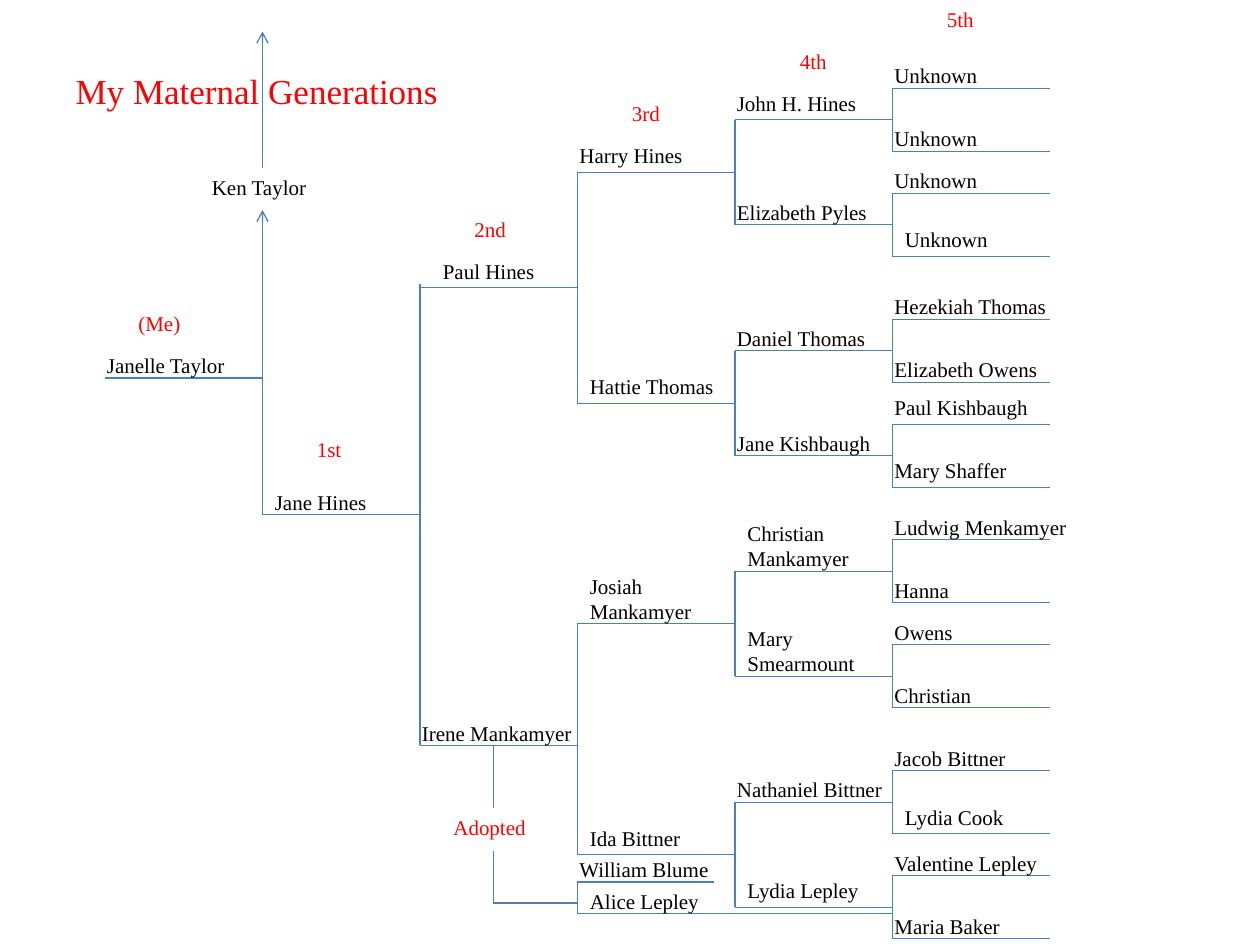
"""Build a family tree slide of maternal generations."""
from dataclasses import dataclass

from lxml import etree
from pptx import Presentation, util as u
from pptx.dml.color import RGBColor
from pptx.enum import shapes, text
from pptx.oxml.ns import qn


@dataclass(frozen=True)
class Theme:
    font: str = "Times New Roman"
    ink: str = "000000"
    accent: str = "FF0000"
    branch: str = "4B7EBC"
    body: int = 12
    heading: int = 20
    stroke: float = 0.75


COLUMNS, ROWS = 120, 90
STEP = 15
FIRST_COLUMN = 10
LINE_HEIGHT, HEADING_HEIGHT, EXTRA_LINE = 3.6, 5.3, 2.4

# Each person: line row, name, text width, indent, rise above the line, wrap.
GENERATIONS = [
    [(36, "Janelle Taylor", 13.8, 0, 3, False)],
    [(49, "Jane Hines", 11.3, 1, 3, False)],
    [
        (27.4, "Paul Hines", 13, 2, 3.4, True),
        (71, "Irene Mankamyer", 16.9, 0, 3, False),
    ],
    [
        (16.4, "Harry Hines", 12.4, 0, 3.4, False),
        (38.4, "Hattie Thomas", 14.4, 1, 3.4, False),
        (59.4, "Josiah\nMankamyer", 12.2, 1, 5.4, False),
        (81.4, "Ida Bittner", 11.2, 1, 3.4, False),
    ],
    [
        (11.4, "John H. Hines", 13.9, 0, 3.4, False),
        (21.4, "Elizabeth Pyles", 15, 0, 3, False),
        (33.4, "Daniel Thomas", 14.9, 0, 3, False),
        (43.4, "Jane Kishbaugh", 15.2, 0, 3, False),
        (54.4, "Christian\nMankamyer", 12.2, 1, 5.4, False),
        (64.4, "Mary\nSmearmount", 13.1, 1, 5.4, False),
        (76.4, "Nathaniel Bittner", 16.4, 0, 3, False),
        (86.4, "Lydia Lepley", 13.2, 1, 3.4, False),
    ],
    [
        (8.4, "Unknown", 10.3, 0, 3, False),
        (14.4, "Unknown", 20, 0, 3, True),
        (18.4, "Unknown", 10.3, 0, 3, False),
        (24.4, "Unknown", 10.3, 1, 3.4, False),
        (30.4, "Hezekiah Thomas", 17, 0, 3, False),
        (36.4, "Elizabeth Owens", 16.2, 0, 3, False),
        (40.4, "Paul Kishbaugh", 15.2, 0, 3.4, False),
        (46.4, "Mary Shaffer", 13.2, 0, 3.4, False),
        (51.4, "Ludwig Menkamyer", 19, 0, 3, False),
        (57.4, "Hanna", 7.7, 0, 3, False),
        (61.4, "Owens", 8, 0, 3, False),
        (67.4, "Christian", 9.8, 0, 3, False),
        (73.4, "Jacob Bittner", 13.2, 0, 3, False),
        (79.4, "Lydia Cook", 15, 1, 3.4, True),
        (83.4, "Valentine Lepley", 16.2, 0, 3, False),
        (89.4, "Maria Baker", 12.6, 0, 3, False),
    ],
]
BRACKET_OVERHANG = {2: 0.4}

GENERATION_LABELS = [
    ("(Me)", 12, 29, 6.5, True),
    ("1st", 29, 41, 4.9, False),
    ("2nd", 44, 20, 5.5, False),
    ("3rd", 59, 9, 5.2, False),
    ("4th", 75, 4, 5, False),
    ("5th", 89, 0, 5, False),
    ("Adopted", 42, 77, 10, True),
]
RELATIVES = [
    ("Ken Taylor", 19, 16, 11.5),
    ("William Blume", 54, 81, 14.9),
    ("Alice Lepley", 55, 84, 13),
]
ADOPTION_LINES = [
    (47, 71, 47, 77),
    (47, 81, 47, 86),
    (47, 86, 55, 86),
    (55, 84, 68, 84),
    (55, 84, 55, 87),
    (55, 87, 85, 87),
]
FATHER_ARROWS = [(25, 49, 25, 20), (25, 16, 25, 3)]


def write(frame, content, *, font, size, color, wrap=False):
    """Fill a text frame with left-aligned, formatted paragraphs."""
    frame.text = content
    frame.word_wrap = wrap
    frame.auto_size = text.MSO_AUTO_SIZE.SHAPE_TO_FIT_TEXT
    frame.vertical_anchor = text.MSO_ANCHOR.TOP
    for paragraph in frame.paragraphs:
        paragraph.alignment = text.PP_ALIGN.LEFT
        paragraph.font.name = font
        paragraph.font.size = u.Pt(size)
        paragraph.font.color.rgb = RGBColor.from_string(color)


class TreeSlide:
    """Hold the theme and the slide, and draw parts on its grid."""

    def __init__(self, deck, theme):
        """Add a title-only slide to the deck."""
        self.theme = theme
        self.slide = deck.slides.add_slide(deck.slide_layouts[5])
        self.column = deck.slide_width / COLUMNS
        self.row = deck.slide_height / ROWS

    def place(self, column, row):
        """Turn a grid position into slide lengths."""
        return round(column * self.column), round(row * self.row)

    def title(self, content, column, row, width):
        """Move and format the title placeholder."""
        heading = self.slide.shapes.title
        heading.left, heading.top = self.place(column, row)
        heading.width, heading.height = self.place(width, HEADING_HEIGHT)
        write(heading.text_frame, content, font=self.theme.font,
              size=self.theme.heading, color=self.theme.accent)

    def label(self, content, column, row, width, wrap=False, color=None):
        """Add a text label."""
        height = LINE_HEIGHT + EXTRA_LINE * content.count("\n")
        box = self.slide.shapes.add_textbox(
            *self.place(column, row), *self.place(width, height))
        write(box.text_frame, content, font=self.theme.font, wrap=wrap,
              size=self.theme.body, color=color or self.theme.ink)

    def line(self, start_column, start_row, end_column, end_row, arrow=False):
        """Add a branch line, with an arrowhead at its end if asked."""
        branch = self.slide.shapes.add_connector(
            shapes.MSO_CONNECTOR.STRAIGHT,
            *self.place(start_column, start_row),
            *self.place(end_column, end_row))
        branch.line.color.rgb = RGBColor.from_string(self.theme.branch)
        branch.line.width = u.Pt(self.theme.stroke)
        if arrow:
            etree.SubElement(branch.line._get_or_add_ln(),
                             qn("a:tailEnd"), type="arrow")
        etree.SubElement(branch._element.spPr, qn("a:effectLst"))

    def generation(self, number, people):
        """Draw one generation and the brackets that join its couples."""
        column = FIRST_COLUMN + STEP * number
        for row, name, width, indent, rise, wrap in people:
            self.line(column, row, column + STEP, row)
            self.label(name, column - 1 + indent, row - rise, width, wrap)
        for husband, wife in zip(people[::2], people[1::2]):
            top = husband[0] - BRACKET_OVERHANG.get(number, 0)
            self.line(column, top, column, wife[0])


def main():
    """Build and save the deck."""
    deck = Presentation()
    deck.slide_width, deck.slide_height = u.Inches(10), u.Inches(7.5)
    theme = Theme()
    tree = TreeSlide(deck, theme)
    tree.title("My Maternal Generations", 6, 6, 37.1)
    for number, people in enumerate(GENERATIONS):
        tree.generation(number, people)
    for ends in ADOPTION_LINES:
        tree.line(*ends)
    for ends in FATHER_ARROWS:
        tree.line(*ends, arrow=True)
    for relative in RELATIVES:
        tree.label(*relative)
    for generation_label in GENERATION_LABELS:
        tree.label(*generation_label, color=theme.accent)
    deck.save("out.pptx")


if __name__ == "__main__":
    main()
